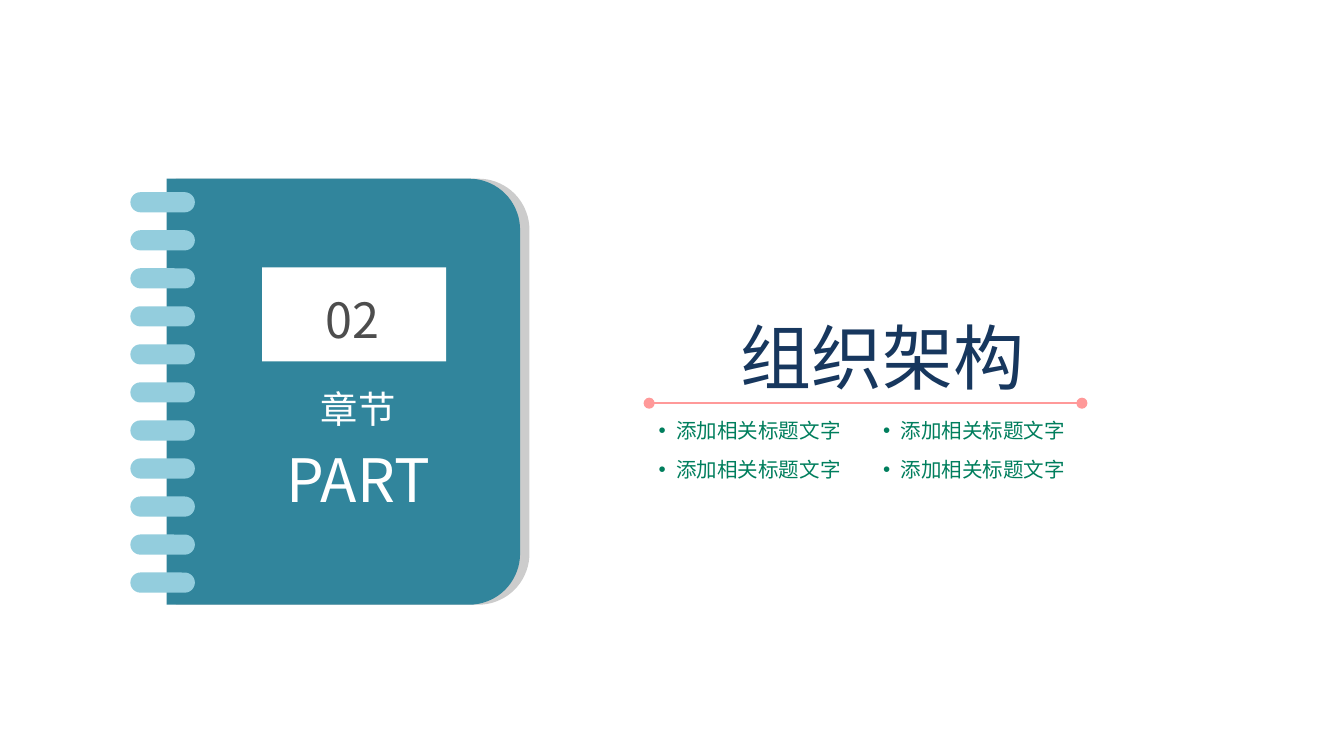
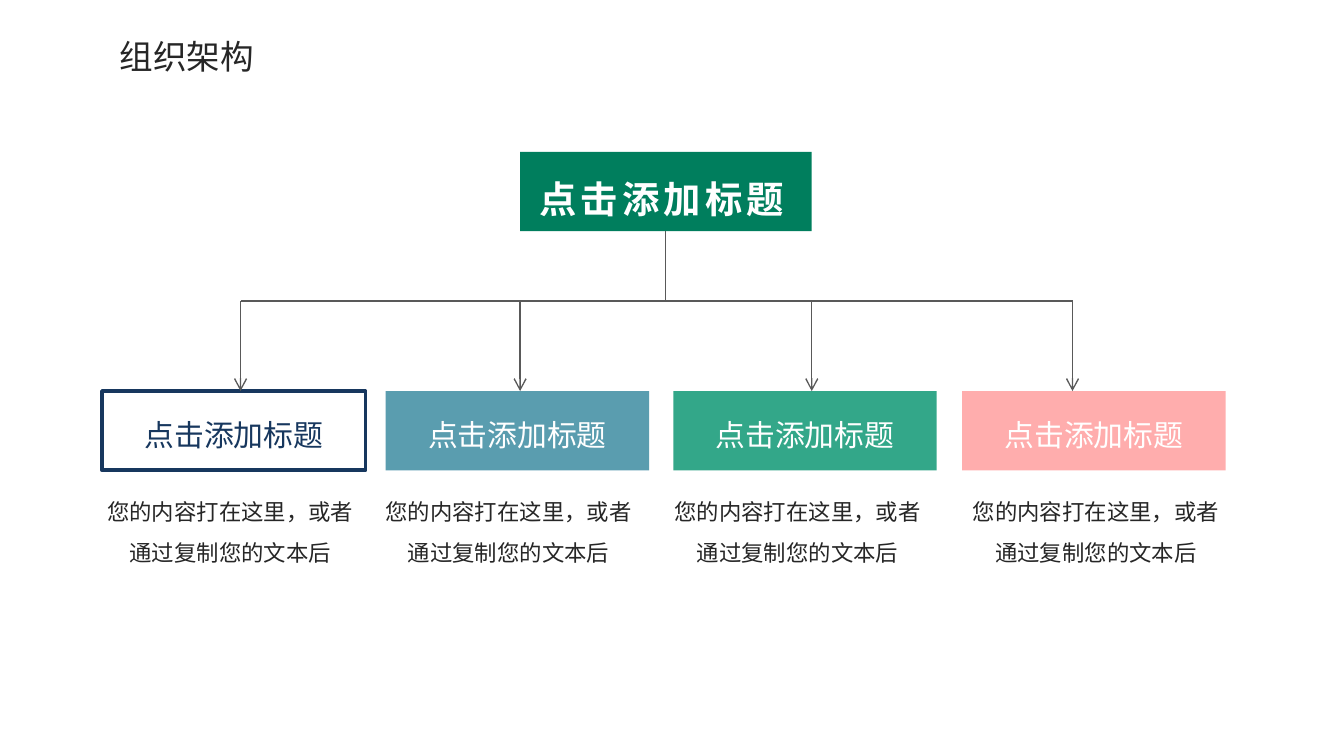
import math
from pptx import Presentation, util as u
from pptx.dml.color import RGBColor
from pptx.enum import shapes, text
from pptx.oxml.ns import qn
from lxml import etree

NAVY = RGBColor(0x17, 0x37, 0x5E)
TEAL = RGBColor(0x31, 0x85, 0x9C)
SKY = RGBColor(0x93, 0xCD, 0xDD)
GREEN = RGBColor(0x00, 0x7E, 0x5D)
MINT = RGBColor(0x00, 0x92, 0x6C)
PINK = RGBColor(0xFF, 0x99, 0x99)
WHITE = RGBColor(0xFF, 0xFF, 0xFF)
SHADE = RGBColor(0xCC, 0xCC, 0xCC)
INK = RGBColor(0x26, 0x26, 0x26)
GREY = RGBColor(0x4D, 0x4D, 0x4D)
RULE = RGBColor(0x59, 0x59, 0x59)
NOTO = "Noto Sans CJK SC"
ARIAL = "Arial"
BOX_W, BOX_H, BOX_TOP = 1.96, 0.59, 2.91
BUS_Y = 2.24

COLUMNS = [
    (0.76, 0.68, 1.79, None, NAVY),
    (2.87, 2.75, 3.87, TEAL, WHITE),
    (5.01, 4.9, 6.04, MINT, WHITE),
    (7.16, 7.12, 7.98, PINK, WHITE),
]


def inches(*lengths):
    return [u.Inches(v) for v in lengths]


def add_child(parent, tag, **attrs):
    child = etree.SubElement(parent, qn(tag))
    for key, value in attrs.items():
        child.set(key, str(value))
    return child


def add_text(s, at, lines, size=12, color=INK, font=NOTO, bold=None,
             center=False, wrap=True, inset=(0.1, 0.05), spacing=None,
             tracking=None, bullet=None, before_pct=None):
    tf = s.shapes.add_textbox(*inches(*at)).text_frame
    tf.word_wrap = wrap
    tf.auto_size = text.MSO_AUTO_SIZE.SHAPE_TO_FIT_TEXT
    tf.margin_left = tf.margin_right = u.Inches(inset[0])
    tf.margin_top = tf.margin_bottom = u.Inches(inset[1])
    if isinstance(lines, str):
        lines = [(lines, size)]
    for i, (line, points) in enumerate(lines):
        p = tf.add_paragraph() if i else tf.paragraphs[0]
        if center:
            p.alignment = text.PP_ALIGN.CENTER
        if spacing:
            p.line_spacing = spacing
        pPr = p._p.get_or_add_pPr()
        if i and before_pct:
            add_child(add_child(pPr, "a:spcBef"), "a:spcPct", val=before_pct * 1000)
        if bullet:
            p.level = 1
            indent = u.Inches(0.13)
            pPr.set("marL", str(indent))
            pPr.set("indent", str(-indent))
            add_child(pPr, "a:buFont", typeface=ARIAL)
            add_child(pPr, "a:buChar", char=bullet)
        r = p.add_run()
        r.text = line
        r.font.size = u.Pt(points)
        r.font.bold = bold
        r.font.color.rgb = color
        r.font.name = font
        rPr = r._r.get_or_add_rPr()
        add_child(rPr, "a:ea", typeface=NOTO)
        if tracking:
            rPr.set("spc", str(round(tracking * 100)))


def paint(sp, fill=None, line=None, alpha=None):
    sp.shadow.inherit = False
    if fill is None:
        sp.fill.background()
    else:
        sp.fill.solid()
        sp.fill.fore_color.rgb = fill
        if alpha:
            clr = sp._element.spPr.find(qn("a:solidFill")).find(qn("a:srgbClr"))
            add_child(clr, "a:alpha", val=alpha * 1000)
    if line is None:
        sp.line.fill.background()
    else:
        sp.line.color.rgb = line
        sp.line.width = u.Pt(2)


def add_box(s, at, kind=shapes.MSO_SHAPE.RECTANGLE, **look):
    sp = s.shapes.add_shape(kind, *inches(*at))
    paint(sp, **look)
    return sp


def add_line(s, start, end, color=RULE, width=0.75, head=None, tail=None):
    c = s.shapes.add_connector(shapes.MSO_CONNECTOR.STRAIGHT, *inches(*start, *end))
    c.line.color.rgb = color
    c.line.width = u.Pt(width)
    ln = c._element.spPr.find(qn("a:ln"))
    for tag, kind in (("a:headEnd", head), ("a:tailEnd", tail)):
        if kind:
            add_child(ln, tag, type=kind)
    add_child(c._element.spPr, "a:effectLst")


def add_cover(s, left, color):
    top, width, height, radius = 1.33, 2.63, 3.17, 0.38
    cx = left + width - radius
    corners = [(top + radius, -90), (top + height - radius, 0)]
    arc = [(cx + radius * math.cos(math.radians(start + step)),
            cy + radius * math.sin(math.radians(start + step)))
           for cy, start in corners for step in range(0, 91, 5)]
    builder = s.shapes.build_freeform(*inches(left, top))
    builder.add_line_segments([inches(*point) for point in arc + [(left, top + height)]])
    paint(builder.convert_to_shape(), fill=color)


def add_notebook(s):
    add_cover(s, 1.31, SHADE)
    add_cover(s, 1.24, TEAL)
    add_box(s, (1.95, 1.99, 1.37, 0.7), fill=WHITE)
    rings, first, last = 11, 1.43, 4.26
    for i in range(rings):
        y = first + i * (last - first) / (rings - 1)
        ring = add_box(s, (0.97, y, 0.48, 0.15),
                       shapes.MSO_SHAPE.ROUNDED_RECTANGLE, fill=SKY)
        ring.adjustments[0] = 0.5
    add_text(s, (1.98, 2.16, 1.29, 0.44), "02", size=26, color=GREY,
             center=True, inset=(0, 0))
    add_text(s, (2.05, 2.87, 1.23, 0.98), [("章节", 20), ("PART", 32)],
             color=WHITE, center=True, inset=(0, 0), before_pct=20)


def section_slide(s):
    add_line(s, (4.83, 3), (8.05, 3), PINK, 1, head="oval", tail="oval")
    add_text(s, (4.83, 2.33, 3.48, 0.65), "组织架构", size=38, color=NAVY,
             font=ARIAL, center=True, inset=(0, 0))
    for y in (3.07, 3.36):
        for x in (4.83, 6.5):
            add_text(s, (x, y, 1.55, 0.26), "添加相关标题文字", size=11, color=GREEN,
                     font=ARIAL, wrap=False, inset=(0.07, 0.04), bullet="•")
    add_notebook(s)


def chart_slide(s):
    add_text(s, (0.79, 0.22, 1.21, 0.4), "组织架构", size=18, wrap=False)
    add_box(s, (3.87, 1.13, 2.17, BOX_H), fill=GREEN)
    add_line(s, (COLUMNS[0][2], BUS_Y), (COLUMNS[-1][2], BUS_Y))
    add_line(s, (4.95, 1.72), (4.95, BUS_Y))
    add_text(s, (3.89, 1.26, 2.07, 0.44), "点击添加标题", size=20, color=WHITE,
             bold=True, center=True, wrap=False, tracking=2.2)
    for box_x, body_x, arrow_x, fill, color in COLUMNS:
        add_box(s, (box_x, BOX_TOP, BOX_W, BOX_H), fill=fill, alpha=80,
                line=None if fill else NAVY)
        add_line(s, (arrow_x, BUS_Y), (arrow_x, BOX_TOP), tail="arrow")
        add_text(s, (box_x + (BOX_W - 1.55) / 2, 3.05, 1.55, 0.37), "点击添加标题",
                 size=16, color=color, center=True, wrap=False)
        add_text(s, (body_x, 3.56, 2.07, 0.71), "您的内容打在这里，或者通过复制您的文本后",
                 center=True, spacing=1.5)


def main():
    prs = Presentation()
    prs.slide_width = u.Inches(10)
    prs.slide_height = u.Inches(10 * 9 / 16)
    for build in (section_slide, chart_slide):
        build(prs.slides.add_slide(prs.slide_layouts[6]))
    prs.save("out.pptx")


if __name__ == "__main__":
    main()
